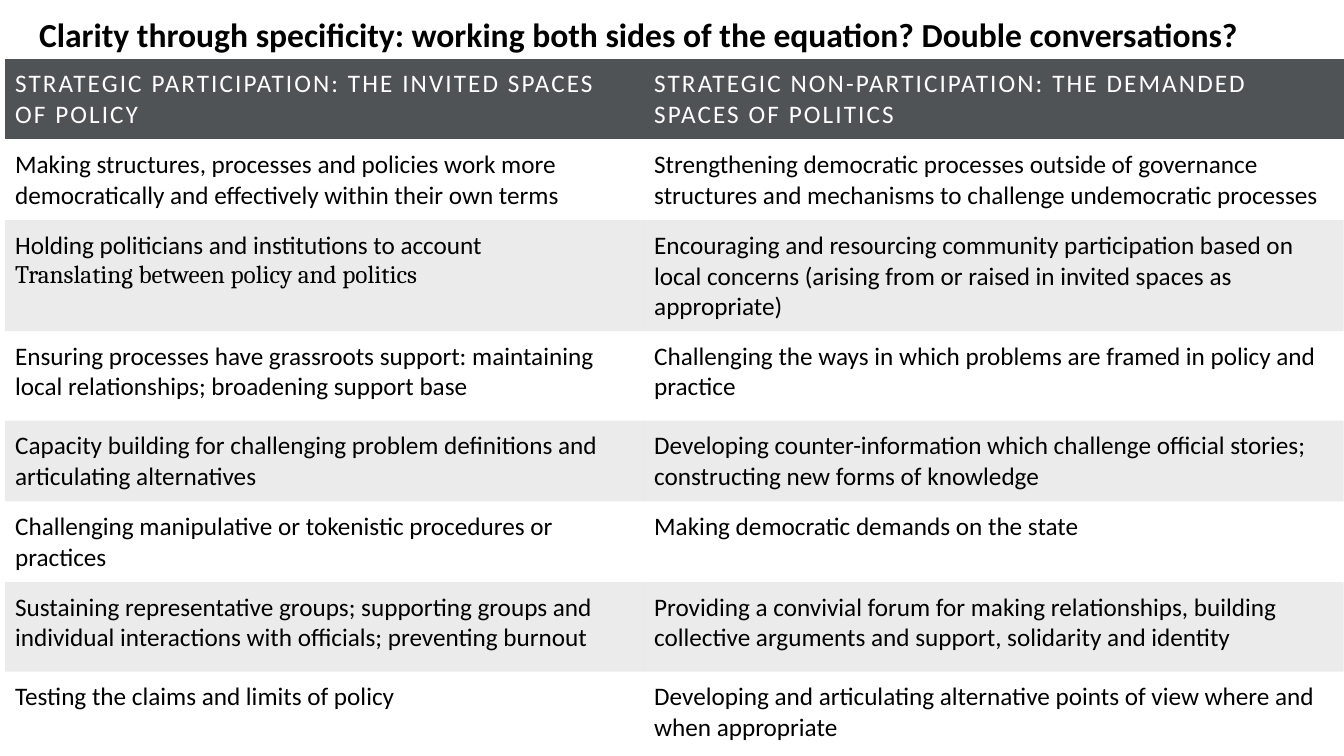
from lxml import etree
from pptx import Presentation
from pptx import util as u
from pptx.dml.color import RGBColor
from pptx.enum import text
from pptx.oxml.ns import qn

BLACK = RGBColor(0x00, 0x00, 0x00)
WHITE = RGBColor(0xFF, 0xFF, 0xFF)
SLATE = RGBColor(0x50, 0x53, 0x56)
BAND_OPACITY = 8
PLAIN_TABLE_STYLE = "{2D5ABB26-0587-4C30-8999-92F81FD0307C}"

TITLE = "Clarity through specificity: working both sides of the equation? Double conversations?"
HEADINGS = (
    "STRATEGIC PARTICIPATION: THE INVITED SPACES OF POLICY",
    "STRATEGIC NON-PARTICIPATION: THE DEMANDED SPACES OF POLITICS",
)
TRANSLATING = "Translating between policy and politics"
STRATEGIES = [
    ("Making structures, processes and policies work more democratically and effectively within their own terms",
     "Strengthening democratic processes outside of governance structures and mechanisms to challenge undemocratic processes"),
    ("Holding politicians and institutions to account\n" + TRANSLATING,
     "Encouraging and resourcing community participation based on local concerns (arising from or raised in invited spaces as appropriate)"),
    ("Ensuring processes have grassroots support: maintaining local relationships; broadening support base",
     "Challenging the ways in which problems are framed in policy and practice"),
    ("Capacity building for challenging problem definitions and articulating alternatives",
     "Developing counter-information which challenge official stories; constructing new forms of knowledge"),
    ("Challenging manipulative or tokenistic procedures or practices",
     "Making democratic demands on the state"),
    ("Sustaining representative groups; supporting groups and individual interactions with officials; preventing burnout",
     "Providing a convivial forum for making relationships, building collective arguments and support, solidarity and identity"),
    ("Testing the claims and limits of policy",
     "Developing and articulating alternative points of view where and when appropriate"),
]
COLUMN_WIDTHS = (456.5, 499.7)
ROW_HEIGHTS = (55, 55, 75.6, 64, 55, 55, 64, 55)


def apply_format(target, values):
    for name, value in values.items():
        setattr(target, name, value)


def write_paragraph(paragraph, words, color, size, font="Calibri", bold=False, tracking=0):
    run = paragraph.add_run()
    run.text = words
    apply_format(run.font, {"name": font, "size": u.Pt(size), "bold": bold})
    run.font.color.rgb = color
    if tracking:
        run.font._element.set("spc", str(round(tracking * 100)))


def fill_cell(cell, color, opacity=100):
    cell.fill.solid()
    cell.fill.fore_color.rgb = color
    if opacity < 100:
        swatch = cell._tc.tcPr.find(qn("a:solidFill"))[0]
        etree.SubElement(swatch, qn("a:alpha")).set("val", str(opacity * 1000))


def add_title(slide, left, top, width, height):
    box = slide.shapes.add_textbox(*map(u.Pt, (left, top, width, height)))
    apply_format(box.text_frame, {"word_wrap": True, "vertical_anchor": text.MSO_ANCHOR.BOTTOM})
    paragraph = box.text_frame.paragraphs[0]
    paragraph.line_spacing = 0.9
    write_paragraph(paragraph, TITLE, BLACK, 24, bold=True)


def write_cell(cell, words, row):
    margins = ("margin_left", "margin_top", "margin_right", "margin_bottom")
    apply_format(cell, dict.fromkeys(margins, u.Pt(7.2)))
    if row == 0:
        fill_cell(cell, SLATE)
    elif row % 2 == 0:
        fill_cell(cell, BLACK, BAND_OPACITY)
    else:
        cell.fill.background()
    frame = cell.text_frame
    for index, line in enumerate(words.split("\n")):
        paragraph = frame.add_paragraph() if index else frame.paragraphs[0]
        write_paragraph(
            paragraph, line, BLACK if row else WHITE, 18,
            font="Cambria" if line == TRANSLATING else "Calibri",
            tracking=0 if row else 1.5,
        )


def add_strategy_table(slide, left, top):
    rows = [HEADINGS, *STRATEGIES]
    box = (left, top, sum(COLUMN_WIDTHS), sum(ROW_HEIGHTS))
    table = slide.shapes.add_table(len(rows), len(HEADINGS), *map(u.Pt, box)).table
    apply_format(table, {"first_row": False, "horz_banding": False})
    table._tbl.tblPr.find(qn("a:tableStyleId")).text = PLAIN_TABLE_STYLE
    for column, width in zip(table.columns, COLUMN_WIDTHS):
        column.width = u.Pt(width)
    for row, (height, entries) in enumerate(zip(ROW_HEIGHTS, rows)):
        table.rows[row].height = u.Pt(height)
        for column, words in enumerate(entries):
            write_cell(table.cell(row, column), words, row)


def main():
    presentation = Presentation()
    apply_format(presentation, {"slide_width": u.Pt(960), "slide_height": u.Pt(540)})
    slide = presentation.slides.add_slide(presentation.slide_layouts[6])
    add_title(slide, 20.9, -49.7, 872, 92.2)
    add_strategy_table(slide, 3.6, 42)
    presentation.save("out.pptx")


if __name__ == "__main__":
    main()
